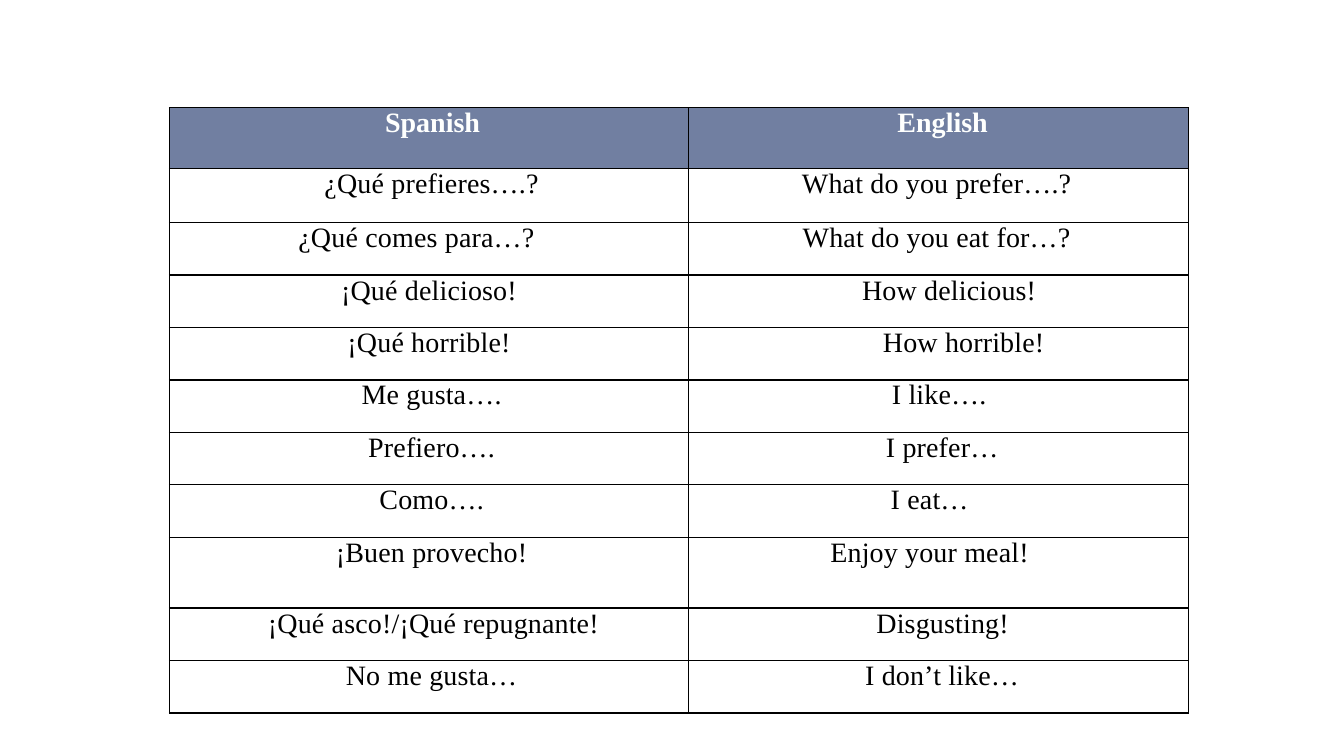
from dataclasses import dataclass

from lxml import etree
from pptx import Presentation
from pptx.dml.color import RGBColor
from pptx.enum import text
from pptx.oxml import ns
from pptx.util import Pt


@dataclass(frozen=True)
class Theme:
    font: str = "Times New Roman"
    size: float = 20
    header_fill: str = "717FA1"
    header_text: str = "FEFFFE"
    body_text: str = "000000"
    border: str = "000000"
    border_width: float = 1
    letter_spacing: float = 0.1


@dataclass(frozen=True)
class Phrase:
    """Wording of one cell; a positive nudge indents left, a negative one right."""
    words: str
    nudge: float = 3.6


@dataclass(frozen=True)
class PhraseRow:
    spanish: Phrase
    english: Phrase
    height: float = 37.5
    space_before: float = 3


THEME = Theme()
COLUMN_WIDTHS = (371, 357)
TABLE_LEFT, TABLE_TOP = 121, 77

ROWS = [
    PhraseRow(Phrase("Spanish", 5), Phrase("English", 5.7), 43.5, 2.9),
    PhraseRow(Phrase("¿Qué prefieres….?"), Phrase("What do you prefer….?", -2.9), 38.5, 3.5),
    PhraseRow(Phrase("¿Qué comes para…?", -18), Phrase("What do you eat for…?", -2.9)),
    PhraseRow(Phrase("¡Qué delicioso!", 0), Phrase("How delicious!", 15)),
    PhraseRow(Phrase("¡Qué horrible!", 0), Phrase("How horrible!", 35.7)),
    PhraseRow(Phrase("Me gusta…."), Phrase("I like….", 0.7)),
    PhraseRow(Phrase("Prefiero…."), Phrase("I prefer…", 5)),
    PhraseRow(Phrase("Como…."), Phrase("I eat…", -12.9)),
    PhraseRow(Phrase("¡Buen provecho!"), Phrase("Enjoy your meal!", -12.9), 50.5),
    PhraseRow(Phrase("¡Qué asco!/¡Qué repugnante!", 6.4), Phrase("Disgusting!", 5.7), space_before=3.3),
    PhraseRow(Phrase("No me gusta…"), Phrase("I don’t like…", 5)),
]


def add_borders(cell) -> None:
    properties = cell._tc.get_or_add_tcPr()
    for index, side in enumerate(("lnL", "lnR", "lnT", "lnB")):
        line = etree.Element(ns.qn(f"a:{side}"), w=str(Pt(THEME.border_width)))
        fill = etree.SubElement(line, ns.qn("a:solidFill"))
        etree.SubElement(fill, ns.qn("a:srgbClr"), val=THEME.border)
        properties.insert(index, line)


def fill_cell(cell, phrase: Phrase, space_before: float, is_header: bool) -> None:
    cell.margin_left = cell.margin_right = cell.margin_top = cell.margin_bottom = 0
    cell.vertical_anchor = text.MSO_ANCHOR.TOP
    if is_header:
        cell.fill.solid()
        cell.fill.fore_color.rgb = RGBColor.from_string(THEME.header_fill)
    else:
        cell.fill.background()
    add_borders(cell)

    # Centred wording, shifted by its indent
    para = cell.text_frame.paragraphs[0]
    span = para.add_run()
    span.text = phrase.words
    para.alignment = text.PP_ALIGN.CENTER
    para.space_before = Pt(space_before)
    indent_side = "marL" if phrase.nudge >= 0 else "marR"
    para._p.get_or_add_pPr().set(indent_side, str(Pt(abs(phrase.nudge))))
    para.font.name = THEME.font
    para.font.size = Pt(THEME.size)
    para.font.bold = is_header
    para.font.color.rgb = RGBColor.from_string(
        THEME.header_text if is_header else THEME.body_text)
    if not is_header:
        span._r.get_or_add_rPr().set("spc", str(round(THEME.letter_spacing * 100)))


def add_phrase_table(page) -> None:
    frame = page.shapes.add_table(
        len(ROWS), len(COLUMN_WIDTHS), Pt(TABLE_LEFT), Pt(TABLE_TOP),
        Pt(sum(COLUMN_WIDTHS)), Pt(sum(row.height for row in ROWS)))
    table = frame.table
    table.first_row = table.horz_banding = False
    for column, width in zip(table.columns, COLUMN_WIDTHS):
        column.width = Pt(width)
    for index, row in enumerate(ROWS):
        table.rows[index].height = Pt(row.height)
        for column, phrase in enumerate((row.spanish, row.english)):
            fill_cell(table.cell(index, column), phrase, row.space_before, index == 0)


def main() -> None:
    deck = Presentation()
    deck.slide_width, deck.slide_height = Pt(960), Pt(540)
    page = deck.slides.add_slide(deck.slide_layouts[6])  # blank layout
    add_phrase_table(page)
    deck.save("out.pptx")


if __name__ == "__main__":
    main()
